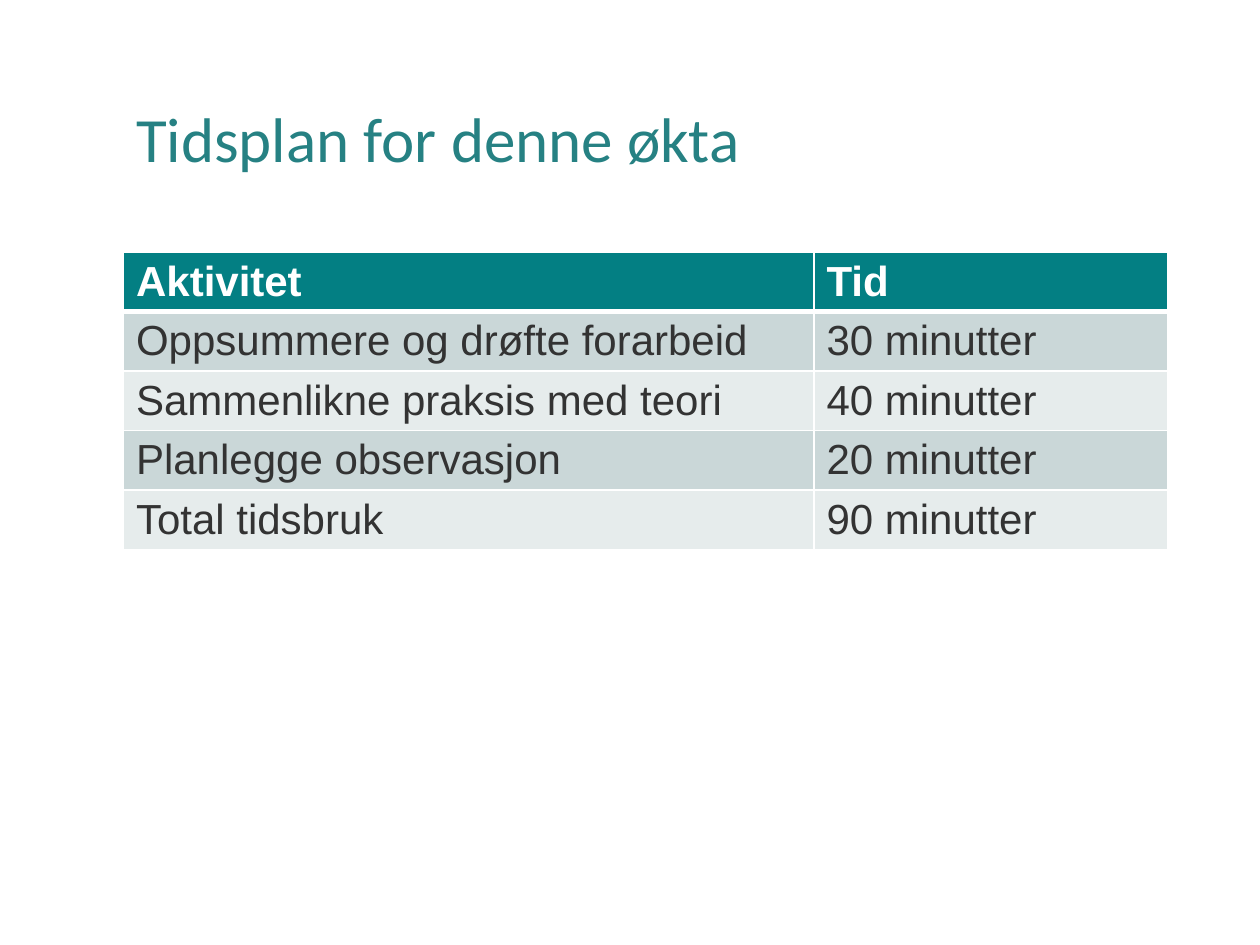
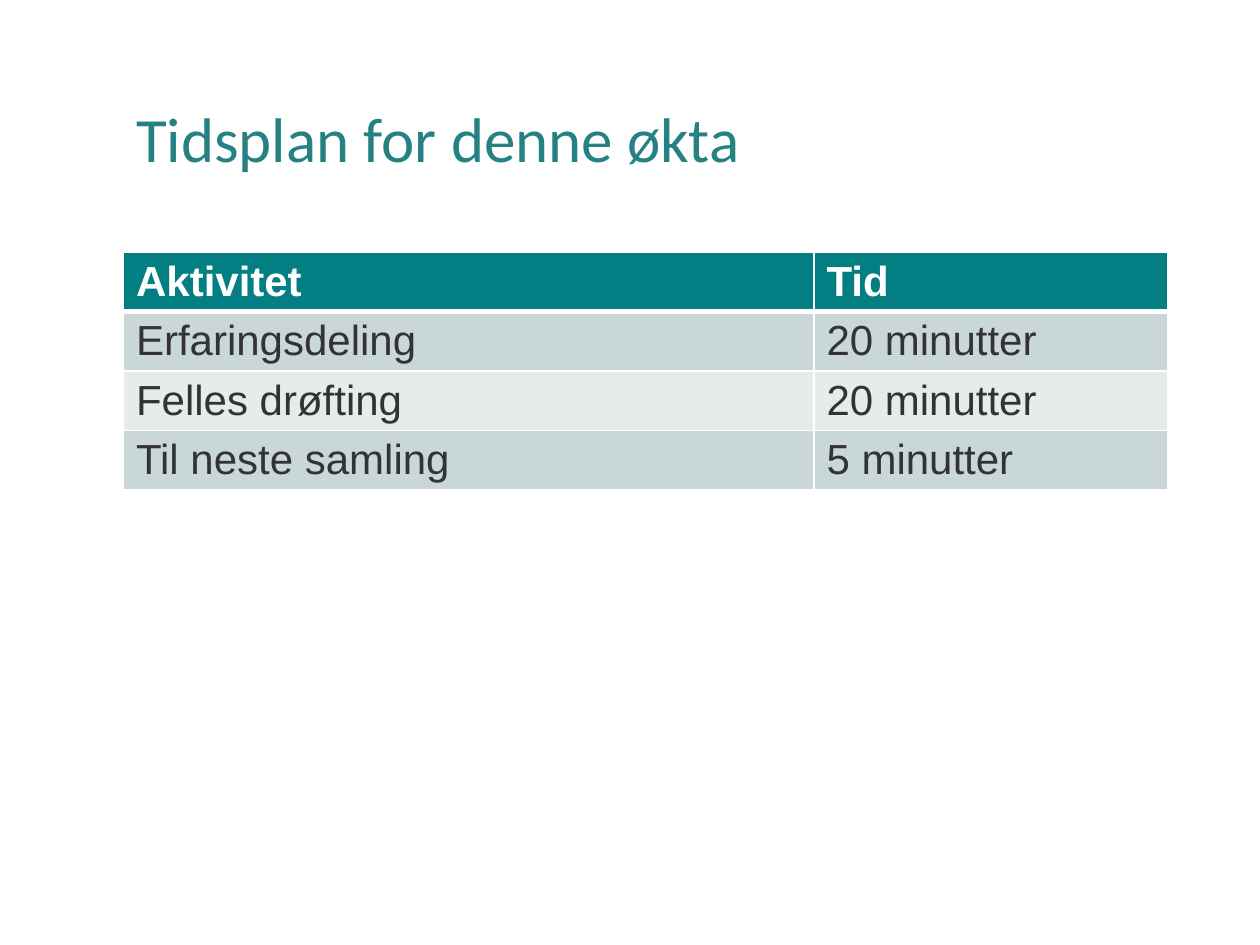
"""Build two session schedules, each a title above an activity table."""
from lxml import etree
from pptx import Presentation
from pptx import util as u
from pptx.dml.color import RGBColor
from pptx.enum import text
from pptx.oxml.ns import qn

TITLE_COLOUR, HEADER_FILL, BODY_TEXT, WHITE = "268183", "037F83", "333333", "FFFFFF"
BAND_FILLS = ["CAD7D8", "E6ECEC"]
LEFT, TITLE_TOP, TABLE_TOP = u.Inches(0.98), u.Inches(0.4), u.Inches(2)
TITLE_HEIGHT, ROW_HEIGHT = u.Inches(1.45), u.Inches(0.47)
COLUMN_WIDTHS = [u.Inches(5.48), u.Inches(2.81)]
WIDTH = sum(COLUMN_WIDTHS)
HEADER = ("Aktivitet", "Tid")
SCHEDULES = [
    ("Tidsplan for denne økta", [
        ("Oppsummere og drøfte forarbeid", "30 minutter"),
        ("Sammenlikne praksis med teori", "40 minutter"),
        ("Planlegge observasjon", "20 minutter"),
        ("Total tidsbruk", "90 minutter"),
    ]),
    ("Tidsplan for denne økta", [
        ("Erfaringsdeling", "20 minutter"),
        ("Felles drøfting", "20 minutter"),
        ("Til neste samling", "5 minutter"),
    ]),
]


def set_font(paragraph, name, size, colour, bold=False):
    font = paragraph.font
    font.name, font.size, font.bold = name, u.Pt(size), bold
    font.color.rgb = RGBColor.from_string(colour)


def add_border(cell, side, points):
    properties = cell._tc.get_or_add_tcPr()
    line = etree.SubElement(properties, qn(f"a:ln{side}"), w=str(u.Pt(points)))
    fill = etree.SubElement(line, qn("a:solidFill"))
    etree.SubElement(fill, qn("a:srgbClr"), val=WHITE)


deck = Presentation()
deck.slide_width, deck.slide_height = u.Inches(10), u.Inches(7.5)

for heading, activities in SCHEDULES:
    page = deck.slides.add_slide(deck.slide_layouts[5])
    title = page.shapes.title
    title.left, title.top, title.width, title.height = LEFT, TITLE_TOP, WIDTH, TITLE_HEIGHT
    title.text_frame.text = heading
    title.text_frame.auto_size = text.MSO_AUTO_SIZE.NONE
    title.text_frame.vertical_anchor = text.MSO_ANCHOR.MIDDLE
    paragraph = title.text_frame.paragraphs[0]
    paragraph.alignment = text.PP_ALIGN.LEFT
    paragraph.line_spacing = 0.9
    set_font(paragraph, "Calibri", 36, TITLE_COLOUR)

    rows = [HEADER, *activities]
    table = page.shapes.add_table(len(rows), len(HEADER), LEFT, TABLE_TOP,
                                  WIDTH, ROW_HEIGHT * len(rows)).table
    for column, width in zip(table.columns, COLUMN_WIDTHS):
        column.width = width
    for row_index, row in enumerate(rows):
        is_header = row_index == 0
        fill_colour = HEADER_FILL if is_header else BAND_FILLS[(row_index - 1) % 2]
        for column_index, wording in enumerate(row):
            cell = table.cell(row_index, column_index)
            cell.text = wording
            set_font(cell.text_frame.paragraphs[0], "Arial", 24,
                     WHITE if is_header else BODY_TEXT, is_header)
            for side in "LRTB":
                under_header = (row_index, side) in [(0, "B"), (1, "T")]
                add_border(cell, side, 3 if under_header else 1)
            cell.fill.solid()
            cell.fill.fore_color.rgb = RGBColor.from_string(fill_colour)

deck.save("out.pptx")
